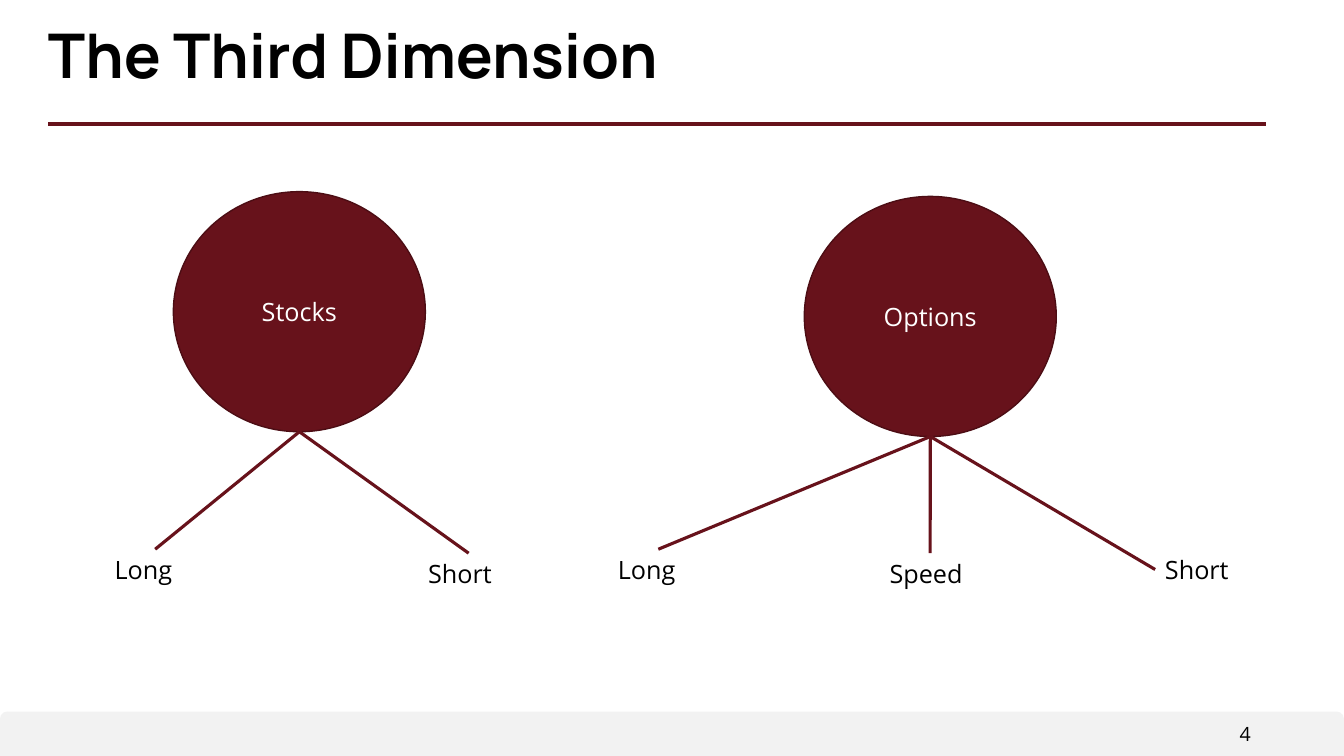
from lxml import etree
from pptx import Presentation
from pptx.dml.color import RGBColor
from pptx.enum.shapes import MSO_CONNECTOR, MSO_SHAPE
from pptx.enum.text import MSO_ANCHOR, PP_ALIGN
from pptx.oxml.ns import qn
from pptx.util import Cm, Pt

STRAIGHT = MSO_CONNECTOR.STRAIGHT
OVAL = MSO_SHAPE.OVAL
FOOTER_SHAPE = MSO_SHAPE.ROUND_2_SAME_RECTANGLE
MIDDLE = MSO_ANCHOR.MIDDLE
LEFT, CENTER, RIGHT = PP_ALIGN.LEFT, PP_ALIGN.CENTER, PP_ALIGN.RIGHT

COLORS = {"maroon": "67121B", "outline": "4C0D14", "footer": "F2F2F2",
          "black": "000000", "white": "FFFFFF"}
COLORS = {name: RGBColor.from_string(value) for name, value in COLORS.items()}

SLIDE_WIDTH, SLIDE_HEIGHT = 33.87, 19.05
CIRCLE_WIDTH, CIRCLE_HEIGHT = 6.35, 6.05
LABEL_WIDTH, LABEL_HEIGHT = 2.54, 1.02

# Circle text, left, top, then branches: label, left, top, side the line meets
TREES = [
    ("Stocks", 4.37, 4.83, [("Long", 2.64, 13.84, "top"),
                            ("Short", 10.54, 13.94, "top")]),
    ("Options", 20.27, 4.95, [("Long", 15.32, 13.84, "top"),
                              ("Speed", 22.17, 13.94, "top"),
                              ("Short", 29.11, 13.84, "left")]),
]

deck = Presentation()
deck.slide_width, deck.slide_height = Cm(SLIDE_WIDTH), Cm(SLIDE_HEIGHT)
page = deck.slides.add_slide(deck.slide_layouts[6])


def write(box, text, size, color="black", align=LEFT, font="Open Sans"):
    """Fill a shape with one styled paragraph and return the paragraph."""
    box.text_frame.word_wrap = True
    paragraph = box.text_frame.paragraphs[0]
    paragraph.text = text
    paragraph.alignment = align
    paragraph.font.name = font
    paragraph.font.size = Pt(size)
    paragraph.font.color.rgb = COLORS[color]
    return paragraph


def draw_line(x1, y1, x2, y2, width):
    line = page.shapes.add_connector(STRAIGHT, Cm(x1), Cm(y1), Cm(x2), Cm(y2))
    line.line.color.rgb = COLORS["maroon"]
    line.line.width = Pt(width)
    etree.SubElement(line._element.spPr, qn("a:effectLst"))


# Footer, title and rule
footer = page.shapes.add_shape(FOOTER_SHAPE, 0, Cm(17.93), Cm(SLIDE_WIDTH), Cm(1.12))
footer.shadow.inherit = False
footer.fill.solid()
footer.fill.fore_color.rgb = COLORS["footer"]
footer.line.fill.background()

number = page.shapes.add_textbox(Cm(27.48), Cm(18.06), Cm(4.29), Cm(0.86))
write(number, "4", 14, align=RIGHT)

draw_line(1.22, 3.12, 31.9, 3.12, 2.5)

title = page.shapes.add_textbox(Cm(1.02), Cm(0.53), Cm(31.52), Cm(2.31))
frame = title.text_frame
frame.margin_left = frame.margin_right = Cm(0.19)
frame.margin_top = frame.margin_bottom = Cm(0.1)
heading = write(title, "The Third Dimension", 44, font="Manrope")
heading.font.bold = True
heading.line_spacing = 0.9

# Circles with their branches
for name, left, top, branches in TREES:
    circle = page.shapes.add_shape(OVAL, Cm(left), Cm(top),
                                   Cm(CIRCLE_WIDTH), Cm(CIRCLE_HEIGHT))
    circle.shadow.inherit = False
    circle.fill.solid()
    circle.fill.fore_color.rgb = COLORS["maroon"]
    circle.line.color.rgb = COLORS["outline"]
    circle.line.width = Pt(1)
    circle.text_frame.vertical_anchor = MIDDLE
    write(circle, name, 18, "white", CENTER)

    for text, label_left, label_top, side in branches:
        label = page.shapes.add_textbox(Cm(label_left), Cm(label_top),
                                        Cm(LABEL_WIDTH), Cm(LABEL_HEIGHT))
        write(label, text, 18)
        if side == "top":
            end_x, end_y = label_left + LABEL_WIDTH / 2, label_top
        else:
            end_x, end_y = label_left, label_top + LABEL_HEIGHT / 2
        draw_line(end_x, end_y, left + CIRCLE_WIDTH / 2, top + CIRCLE_HEIGHT, 2.25)

deck.save("out.pptx")
